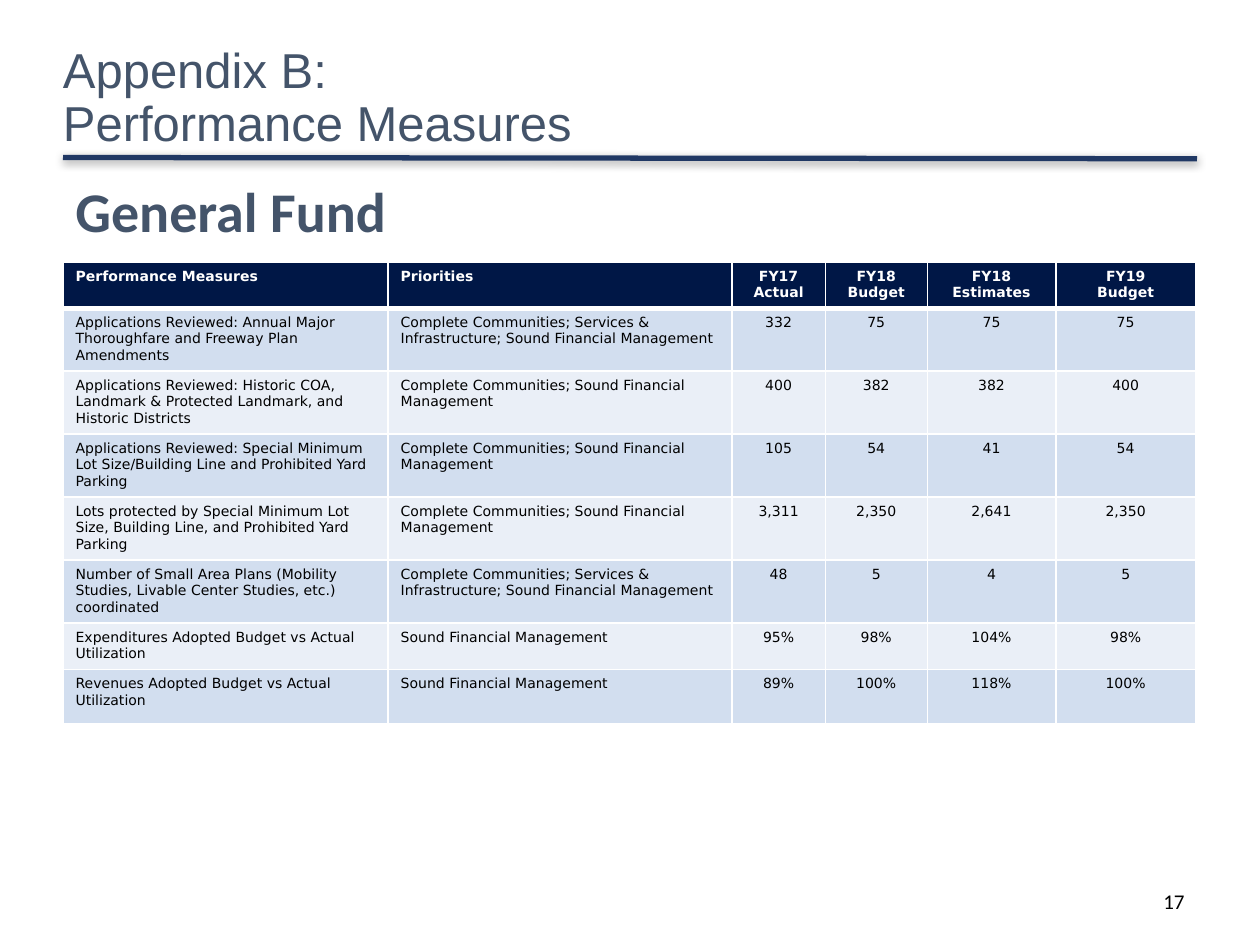
from lxml import etree
from pptx import Presentation
from pptx.dml.color import RGBColor
from pptx.enum.shapes import MSO_CONNECTOR
from pptx.enum.text import MSO_ANCHOR, MSO_AUTO_SIZE, PP_ALIGN
from pptx.oxml import parse_xml
from pptx.oxml.ns import nsdecls, qn
from pptx.util import Inches, Pt

SLATE, NAVY, HEADER = "44546A", "203864", "001746"
BANDS = ("D2DEEF", "EAEFF7")
WHITE, BLACK = "FFFFFF", "000000"

COMMUNITIES = "Complete Communities; Sound Financial Management"
SERVICES = ("Complete Communities; Services & Infrastructure; "
            "Sound Financial Management")
FINANCE = "Sound Financial Management"

HEADINGS = ("Performance Measures", "Priorities", "FY17\nActual",
            "FY18\nBudget", "FY18\nEstimates", "FY19\nBudget")
MEASURES = [
    ("Applications Reviewed: Annual Major Thoroughfare and Freeway Plan Amendments",
     SERVICES, "332", "75", "75", "75"),
    ("Applications Reviewed: Historic COA, Landmark & Protected Landmark, "
     "and Historic Districts",
     COMMUNITIES, "400", "382", "382", "400"),
    ("Applications Reviewed: Special Minimum Lot Size/Building Line "
     "and Prohibited Yard Parking",
     COMMUNITIES, "105", "54", "41", "54"),
    ("Lots protected by Special Minimum Lot Size, Building Line, "
     "and Prohibited Yard Parking",
     COMMUNITIES, "3,311", "2,350", "2,641", "2,350"),
    ("Number of Small Area Plans (Mobility Studies, Livable Center Studies, etc.) "
     "coordinated",
     SERVICES, "48", "5", "4", "5"),
    ("Expenditures Adopted Budget vs Actual Utilization",
     FINANCE, "95%", "98%", "104%", "98%"),
    ("Revenues Adopted Budget vs Actual Utilization",
     FINANCE, "89%", "100%", "118%", "100%"),
]
COLUMN_WIDTHS = (2.58, 2.73, 0.74, 0.81, 1.02, 1.11)
ROW_HEIGHTS = (0.36, *[0.49] * 5, 0.37, 0.43)


def color(value):
    return RGBColor.from_string(value)


def add_run(paragraph, text, size, font, hex_color, bold=False):
    run = paragraph.add_run()
    run.text = text
    run.font.size = Pt(size)
    run.font.name = font
    run.font.bold = bold
    run.font.color.rgb = color(hex_color)


def add_text_box(slide, box, wrap=True):
    frame = slide.shapes.add_textbox(*map(Inches, box)).text_frame
    frame.word_wrap = wrap
    return frame


def add_title(slide):
    frame = add_text_box(slide, (0.5, 0.33, 6.86, 0.92))
    frame.vertical_anchor = MSO_ANCHOR.MIDDLE
    frame.margin_left = frame.margin_right = 0
    frame.margin_top = frame.margin_bottom = 0
    paragraph = frame.paragraphs[0]
    paragraph.line_spacing = 0.9
    add_run(paragraph, "Appendix B:", 28, "Arial", SLATE)
    paragraph.add_line_break()
    add_run(paragraph, "Performance Measures", 28, "Arial", SLATE)


def add_title_rule(slide):
    rule = slide.shapes.add_connector(
        MSO_CONNECTOR.STRAIGHT, *map(Inches, (0.5, 1.25, 9.5, 1.26)))
    rule.line.color.rgb = color(NAVY)
    rule.line.width = Pt(3)
    rule._element.spPr.append(parse_xml(
        f'<a:effectLst {nsdecls("a")}>'
        f'<a:outerShdw blurRad="{Pt(5)}" dist="{Pt(1.6)}" dir="5400000" rotWithShape="0">'
        f'<a:srgbClr val="{BLACK}"><a:alpha val="38000"/></a:srgbClr>'
        '</a:outerShdw></a:effectLst>'))


def set_borders(cell, bottom_width):
    """Draw white cell borders; call before the fill, which must follow them."""
    properties = cell._tc.get_or_add_tcPr()
    for side, width in (("L", 1), ("R", 1), ("T", 1), ("B", bottom_width)):
        line = etree.SubElement(properties, qn(f"a:ln{side}"), w=str(Pt(width)))
        fill = etree.SubElement(line, qn("a:solidFill"))
        etree.SubElement(fill, qn("a:srgbClr"), val=WHITE)


def add_measures_table(slide):
    rows = [HEADINGS, *MEASURES]
    table = slide.shapes.add_table(
        len(rows), len(HEADINGS), Inches(0.5), Inches(2.08),
        Inches(sum(COLUMN_WIDTHS)), Inches(sum(ROW_HEIGHTS))).table
    for column, width in zip(table.columns, COLUMN_WIDTHS):
        column.width = Inches(width)
    for row, height in zip(table.rows, ROW_HEIGHTS):
        row.height = Inches(height)

    for r, values in enumerate(rows):
        is_header = r == 0
        for c, value in enumerate(values):
            cell = table.cell(r, c)
            set_borders(cell, 3 if is_header else 1)
            cell.fill.solid()
            cell.fill.fore_color.rgb = color(HEADER if is_header else BANDS[(r - 1) % 2])
            frame = cell.text_frame
            for i, text in enumerate(value.split("\n")):
                paragraph = frame.add_paragraph() if i else frame.paragraphs[0]
                paragraph.alignment = PP_ALIGN.CENTER if c > 1 else PP_ALIGN.LEFT
                add_run(paragraph, text, 8, "DejaVu Sans",
                        WHITE if is_header else BLACK, bold=is_header)


def main():
    presentation = Presentation()
    presentation.slide_width, presentation.slide_height = Inches(10), Inches(7.5)
    slide = presentation.slides.add_slide(presentation.slide_layouts[6])

    add_title_rule(slide)
    add_title(slide)

    page_number = add_text_box(slide, (7.17, 6.95, 2.33, 0.4))
    page_number.vertical_anchor = MSO_ANCHOR.MIDDLE
    page_number.paragraphs[0].alignment = PP_ALIGN.RIGHT
    add_run(page_number.paragraphs[0], "17", 12, "Calibri", BLACK)

    add_measures_table(slide)

    fund = add_text_box(slide, (0.5, 1.35, 2.69, 0.64), wrap=False)
    fund.auto_size = MSO_AUTO_SIZE.SHAPE_TO_FIT_TEXT
    add_run(fund.paragraphs[0], "General Fund", 32, "Calibri", SLATE, bold=True)

    presentation.save("out.pptx")


if __name__ == "__main__":
    main()
